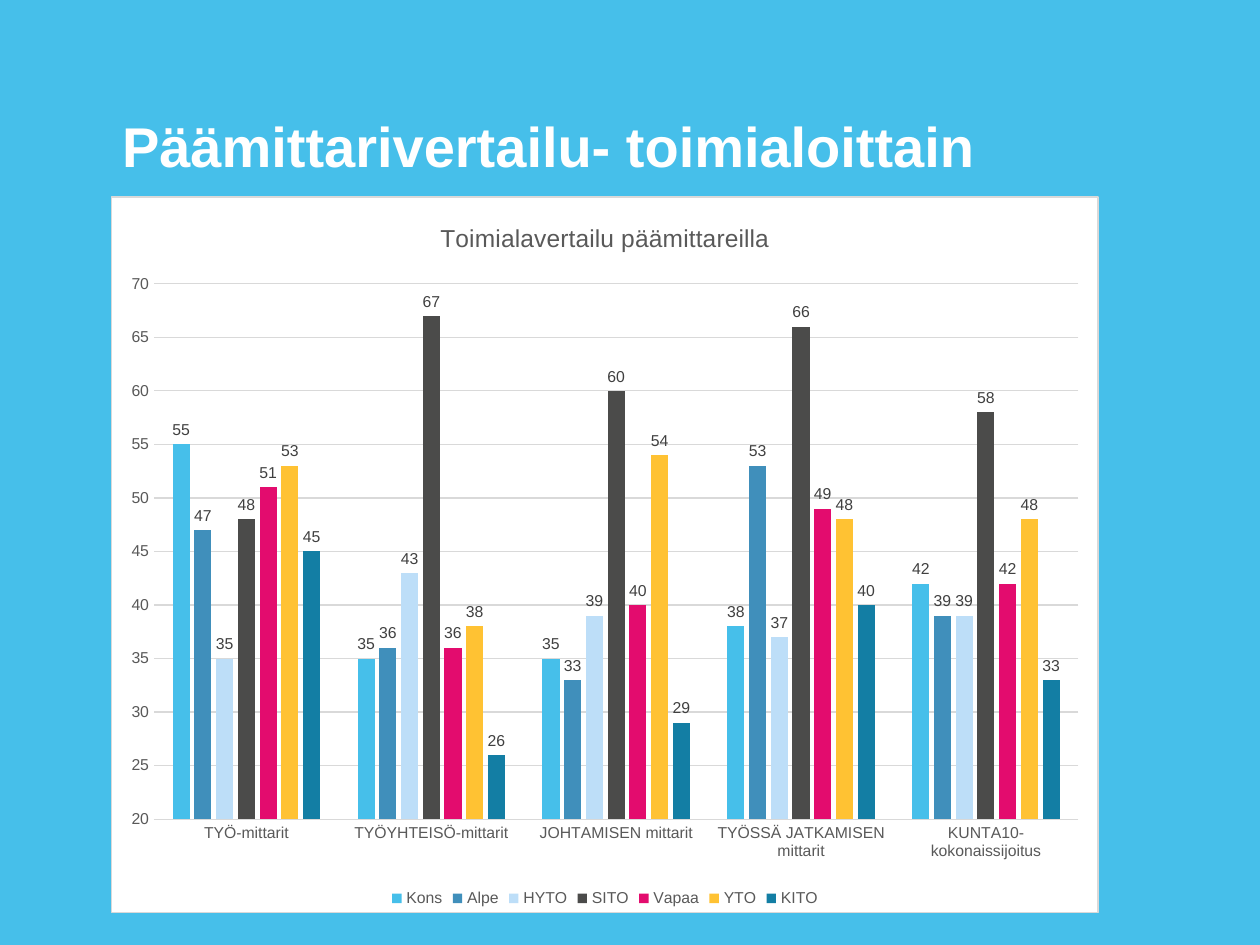
from lxml import etree
from pptx import Presentation
from pptx import util as u
from pptx.chart import data
from pptx.dml import color
from pptx.enum import chart as ce
from pptx.enum import text
from pptx.oxml import parse_xml

FONT = "Arial"
SKY = color.RGBColor(0x46, 0xBF, 0xEA)
WHITE = color.RGBColor(0xFF, 0xFF, 0xFF)
GRID = color.RGBColor(0xD9, 0xD9, 0xD9)
GREY = color.RGBColor(0x59, 0x59, 0x59)
LABEL = color.RGBColor(0x40, 0x40, 0x40)
BLACK = color.RGBColor(0x00, 0x00, 0x00)

CATEGORIES = ["TYÖ-mittarit", "TYÖYHTEISÖ-mittarit", "JOHTAMISEN mittarit",
              "TYÖSSÄ JATKAMISEN mittarit", "KUNTA10-kokonaissijoitus"]
SERIES = [
    ("Kons", (55, 35, 35, 38, 42), SKY),
    ("Alpe", (47, 36, 33, 53, 39), color.RGBColor(0x40, 0x8F, 0xBB)),
    ("HYTO", (35, 43, 39, 37, 39), color.RGBColor(0xBD, 0xDE, 0xF8)),
    ("SITO", (48, 67, 60, 66, 58), color.RGBColor(0x4B, 0x4B, 0x4A)),
    ("Vapaa", (51, 36, 40, 49, 42), color.RGBColor(0xE3, 0x0C, 0x6E)),
    ("YTO", (53, 38, 54, 48, 48), color.RGBColor(0xFF, 0xC2, 0x33)),
    ("KITO", (45, 26, 29, 40, 33), color.RGBColor(0x13, 0x7E, 0xA4)),
]


def set_font(font, size, rgb, bold=False):
    """Apply the slide's typeface with a size, colour and weight."""
    font.name = FONT
    font.size = u.Pt(size)
    font.bold = bold
    font.color.rgb = rgb


def set_line(line):
    """Give a line the thin grey style of the chart."""
    line.color.rgb = GRID
    line.width = u.Pt(0.75)


def place_title(slide, left, top, width, height):
    """Move and format the title placeholder."""
    title = slide.shapes.title
    title.left, title.top, title.width, title.height = left, top, width, height
    frame = title.text_frame
    frame.margin_left = frame.margin_right = 0
    frame.margin_top = frame.margin_bottom = 0
    frame.word_wrap = True
    frame.auto_size = text.MSO_AUTO_SIZE.NONE
    frame.vertical_anchor = text.MSO_ANCHOR.BOTTOM
    paragraph = frame.paragraphs[0]
    paragraph.alignment = text.PP_ALIGN.LEFT
    paragraph.line_spacing = u.Pt(33)
    run = paragraph.add_run()
    run.text = "Päämittarivertailu- toimialoittain"
    set_font(run.font, 32, WHITE, bold=True)


def fill_chart_area(chart):
    """Fill the chart area white inside a thin grey border."""
    area = parse_xml(
        '<c:spPr xmlns:c="http://schemas.openxmlformats.org/drawingml/2006/chart"'
        ' xmlns:a="http://schemas.openxmlformats.org/drawingml/2006/main">'
        f'<a:solidFill><a:srgbClr val="{WHITE}"/></a:solidFill>'
        f'<a:ln w="{u.Pt(0.75)}"><a:solidFill><a:srgbClr val="{GRID}"/></a:solidFill></a:ln>'
        '</c:spPr>')
    chart.element.find(etree.QName(area.nsmap["c"], "chart")).addnext(area)


def format_axes(chart):
    """Style the category and value axes."""
    for axis in (chart.category_axis, chart.value_axis):
        axis.major_tick_mark = axis.minor_tick_mark = ce.XL_TICK_MARK.NONE
        set_font(axis.tick_labels.font, 9, GREY)
    set_line(chart.category_axis.format.line)
    values = chart.value_axis
    values.minimum_scale, values.maximum_scale, values.major_unit = 20, 70, 5
    values.format.line.fill.background()
    values.has_major_gridlines = True
    set_line(values.major_gridlines.format.line)


def format_series(plot):
    """Colour each series and label its columns with their values."""
    plot.gap_width, plot.overlap = 219, -27
    plot.vary_by_categories = False
    for series, (_, _, rgb) in zip(plot.series, SERIES):
        series.format.fill.solid()
        series.format.fill.fore_color.rgb = rgb
        series.invert_if_negative = False
        labels = series.data_labels
        labels.show_value = True
        labels.position = ce.XL_LABEL_POSITION.OUTSIDE_END
        set_font(labels.font, 9, LABEL)


def place_chart(slide, left, top, width, height):
    """Add the clustered column chart comparing the divisions."""
    chart_data = data.CategoryChartData()
    chart_data.categories = CATEGORIES
    for name, values, _ in SERIES:
        chart_data.add_series(name, values)
    chart = slide.shapes.add_chart(
        ce.XL_CHART_TYPE.COLUMN_CLUSTERED, left, top, width, height, chart_data).chart
    set_font(chart.font, 10, BLACK)
    run = chart.chart_title.text_frame.paragraphs[0].add_run()
    run.text = "Toimialavertailu päämittareilla"
    set_font(run.font, 14, GREY)
    chart.chart_title.include_in_layout = False
    chart.has_legend = True
    chart.legend.position = ce.XL_LEGEND_POSITION.BOTTOM
    chart.legend.include_in_layout = False
    set_font(chart.legend.font, 9, GREY)
    fill_chart_area(chart)
    format_axes(chart)
    format_series(chart.plots[0])


def main():
    """Build and save the presentation."""
    presentation = Presentation()
    presentation.slide_width, presentation.slide_height = u.Cm(25.4), u.Cm(19.05)
    slide = presentation.slides.add_slide(presentation.slide_layouts.get_by_name("Title Only"))
    slide.background.fill.solid()
    slide.background.fill.fore_color.rgb = SKY
    place_title(slide, u.Cm(2.46), u.Cm(1.4), u.Cm(21.62), u.Cm(2.21))
    place_chart(slide, u.Cm(2.24), u.Cm(3.96), u.Cm(19.91), u.Cm(14.45))
    presentation.save("out.pptx")


if __name__ == "__main__":
    main()
